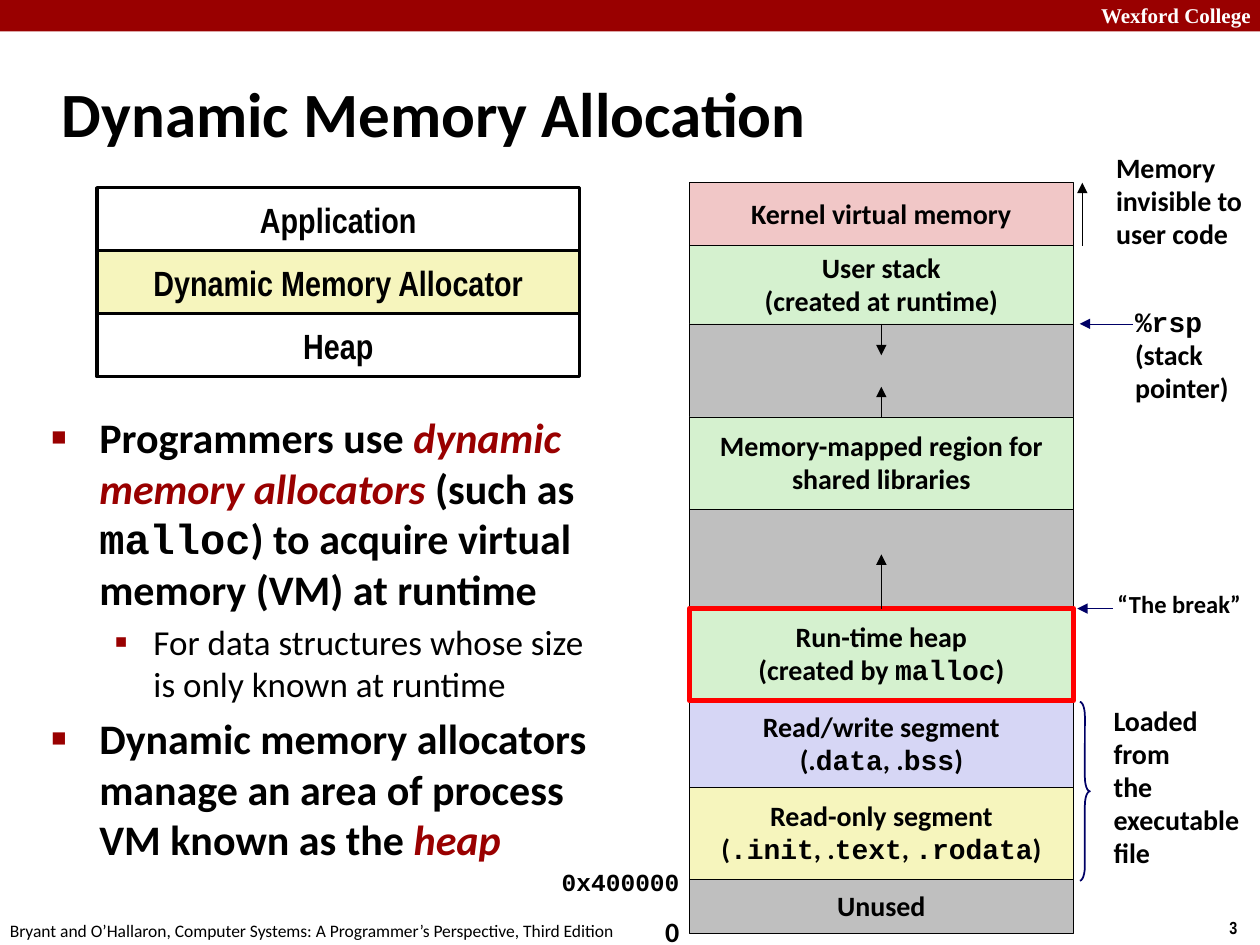
from dataclasses import dataclass

from lxml.etree import SubElement
from pptx import Presentation
from pptx.dml.color import RGBColor
from pptx.enum.shapes import MSO_CONNECTOR, MSO_SHAPE
from pptx.enum.text import MSO_ANCHOR, PP_ALIGN
from pptx.oxml.ns import qn
from pptx.util import Inches, Pt


@dataclass(frozen=True)
class Theme:
    black: str = "000000"
    white: str = "FFFFFF"
    crimson: str = "990000"
    navy: str = "000066"
    red: str = "FF0000"
    pink: str = "F1C7C7"
    green: str = "D5F1CF"
    gray: str = "BFBFBF"
    lilac: str = "D6D6F5"
    yellow: str = "F6F5BD"
    sans: str = "Calibri"
    narrow: str = "Arial Narrow"
    mono: str = "Courier New"
    serif: str = "Times New Roman"
    title: int = 36
    body: int = 24
    sub: int = 20
    label: int = 16
    small: int = 14
    header: int = 12
    footer: int = 10


class SlideBuilder:
    """Draws on one slide; text marks `code` and *emphasis* inline."""

    def __init__(self, slide, theme):
        self.slide, self.theme = slide, theme

    def add_runs(self, paragraph, text, size, font=None, color=None, bold=True):
        for i, code_part in enumerate(text.split("`")):
            for j, part in enumerate(code_part.split("*")):
                if not part:
                    continue
                run = paragraph.add_run()
                run.text = part
                style = run.font
                style.size, style.bold, style.italic = Pt(size), bold, j % 2 == 1
                style.name = self.theme.mono if i % 2 else font or self.theme.sans
                ink = self.theme.crimson if j % 2 else color or self.theme.black
                style.color.rgb = RGBColor.from_string(ink)

    def fill_lines(self, frame, lines, size, align=None, spacing=None, **style):
        for n, line in enumerate(lines):
            paragraph = frame.add_paragraph() if n else frame.paragraphs[0]
            paragraph.alignment, paragraph.line_spacing = align, spacing
            self.add_runs(paragraph, line, size, **style)

    def title(self, text, left, top, width, height):
        holder = self.slide.shapes.title
        holder.left, holder.top = Inches(left), Inches(top)
        holder.width, holder.height = Inches(width), Inches(height)
        frame = holder.text_frame
        frame.vertical_anchor = MSO_ANCHOR.MIDDLE
        self.fill_lines(frame, [text], self.theme.title, PP_ALIGN.LEFT)

    def text(self, lines, left, top, width, height, size, wrap=True, **style):
        box = self.slide.shapes.add_textbox(
            Inches(left), Inches(top), Inches(width), Inches(height))
        box.text_frame.word_wrap = wrap
        self.fill_lines(box.text_frame, lines, size, **style)

    def shape(self, kind, left, top, width, height, fill, line, weight):
        shape = self.slide.shapes.add_shape(
            kind, Inches(left), Inches(top), Inches(width), Inches(height))
        shape.shadow.inherit = False
        if fill:
            shape.fill.solid()
            shape.fill.fore_color.rgb = RGBColor.from_string(fill)
        else:
            shape.fill.background()
        if line:
            shape.line.color.rgb = RGBColor.from_string(line)
            shape.line.width = Pt(weight)
        else:
            shape.line.fill.background()
        return shape

    def block(self, lines, left, top, width, height, fill, size,
              line=None, weight=0.25, **style):
        block = self.shape(MSO_SHAPE.RECTANGLE, left, top, width, height,
                           fill, line or self.theme.black, weight)
        block.text_frame.word_wrap = False
        block.text_frame.vertical_anchor = MSO_ANCHOR.MIDDLE
        self.fill_lines(block.text_frame, lines, size, PP_ALIGN.CENTER, **style)
        return block

    def arrow(self, x1, y1, x2, y2, color=None, start=None):
        arrow = self.slide.shapes.add_connector(
            MSO_CONNECTOR.STRAIGHT, Inches(x1), Inches(y1), Inches(x2), Inches(y2))
        if start:
            arrow.begin_connect(*start)
        arrow.line.color.rgb = RGBColor.from_string(color or self.theme.black)
        arrow.line.width = Pt(0.25)
        props = arrow._element.spPr
        SubElement(props.find(qn("a:ln")), qn("a:tailEnd"), type="triangle")
        SubElement(props, qn("a:effectLst"))

    def bullets(self, items, left, top, width, height):
        box = self.slide.shapes.add_textbox(
            Inches(left), Inches(top), Inches(width), Inches(height))
        frame = box.text_frame
        frame.word_wrap = True
        levels = [(self.theme.body, True, 0.38, 0.38, "■", 60),
                  (self.theme.sub, False, 0.81, 0.31, "▪", 110)]
        for n, (level, text) in enumerate(items):
            size, bold, margin, hang, mark, percent = levels[level]
            paragraph = frame.add_paragraph() if n else frame.paragraphs[0]
            paragraph.level = level
            paragraph.space_before = Pt(size * 0.2)
            self.add_runs(paragraph, text, size, bold=bold)
            props = paragraph._p.get_or_add_pPr()
            props.set("marL", str(Inches(margin)))
            props.set("indent", str(-Inches(hang)))
            tint = SubElement(props, qn("a:buClr"))
            SubElement(tint, qn("a:srgbClr"), val=self.theme.crimson)
            SubElement(props, qn("a:buSzPct"), val=str(percent * 1000))
            SubElement(props, qn("a:buFont"), typeface="Arial")
            SubElement(props, qn("a:buChar"), char=mark)


def main():
    deck = Presentation()
    deck.slide_width, deck.slide_height = Inches(10), Inches(7.5)
    t = Theme()
    b = SlideBuilder(deck.slides.add_slide(deck.slide_layouts[5]), t)

    # Header band, footer and title
    b.shape(MSO_SHAPE.RECTANGLE, 0, 0, 10, 0.25, t.crimson, None, 0)
    b.text(["Wexford College"], 8.64, -0.03, 1.43, 0.3, t.header,
           font=t.serif, color=t.white)
    b.text(["3"], 9.66, 7.23, 0.34, 0.27, t.footer, wrap=False, font=t.narrow)
    b.text(["Bryant and O’Hallaron, Computer Systems: "
            "A Programmer’s Perspective, Third Edition"],
           -0.02, 7.25, 5.08, 0.27, t.footer, wrap=False, bold=False)
    b.title("Dynamic Memory Allocation", 0.39, 0.48, 8.3, 0.83)

    # Main points
    b.bullets([
        (0, "Programmers use *dynamic memory allocators *(such as `malloc`) "
            "to acquire virtual memory (VM) at runtime"),
        (1, "For data structures whose size is only known at runtime"),
        (0, "Dynamic memory allocators manage an area of process VM "
            "known as the *heap*"),
    ], 0.31, 3.22, 4.48, 4.17)

    # Software layers
    layers = [("Application", t.white), ("Dynamic Memory Allocator", t.yellow),
              ("Heap", t.white)]
    for n, (layer, fill) in enumerate(layers):
        b.block([layer], 0.77, 1.49 + 0.5 * n, 3.83, 0.5, fill, t.sub,
                weight=2, font=t.narrow)

    # Address space, from high to low addresses: name, top, fill, lines
    left, width, bottom = 5.47, 3.05, 7.41
    regions = [
        ("kernel", 1.45, t.pink, ["Kernel virtual memory"]),
        ("stack", 1.95, t.green, ["User stack", "(created at runtime)"]),
        ("stack gap", 2.57, t.gray, []),
        ("mapped", 3.31, t.green, ["Memory-mapped region for", "shared libraries"]),
        ("heap gap", 4.04, t.gray, []),
        ("heap", 4.83, t.green, ["Run-time heap", "(created by `malloc`)"]),
        ("data", 5.56, t.lilac, ["Read/write segment", "(.`data`, .`bss`)"]),
        ("code", 6.25, t.yellow,
         ["Read-only segment", "(`.init`, .`text`, `.rodata`)"]),
        ("unused", 6.98, t.gray, ["Unused"]),
    ]
    tops = {name: top for name, top, _, _ in regions}
    ends = [top for _, top, _, _ in regions[1:]] + [bottom]
    spans = list(zip(regions, ends))
    spans.sort(key=lambda span: span[0][0] == "heap")  # red outline on top
    blocks = {}
    for (name, top, fill, lines), end in spans:
        outline = {"line": t.red, "weight": 3} if name == "heap" else {}
        blocks[name] = b.block(lines, left, top, width, end - top, fill,
                               t.label, spacing=0.98, **outline)

    # Growth directions inside the gaps
    middle = left + width / 2
    for name, side, start, tip in [("stack", 2, tops["stack gap"], 2.82),
                                   ("mapped", 0, tops["mapped"], 3.07),
                                   ("heap", 0, tops["heap"], 4.4)]:
        b.arrow(middle, start, middle, tip, start=(blocks[name], side))

    # Side pointers and brace
    b.arrow(8.59, tops["stack"], 8.59, tops["kernel"])
    b.arrow(8.99, tops["stack gap"], 8.57, tops["stack gap"], t.navy)
    b.arrow(8.83, tops["heap"], 8.55, tops["heap"], t.navy)
    brace = b.shape(MSO_SHAPE.RIGHT_BRACE, 8.57, 5.57, 0.08, 1.42, None, t.navy, 1)
    brace.adjustments[0] = 1.42

    # Side labels and addresses
    for lines, x, y, w, h, size in [
        (["Memory", "invisible to", "user code"], 8.76, 1.16, 1.26, 0.89, t.label),
        (["`%rsp`", "(stack", "pointer)"], 8.91, 2.38, 0.95, 0.88, t.label),
        (["“The break”"], 8.77, 4.64, 1.18, 0.32, t.small),
        (["Loaded", "from", "the", "executable", "file"],
         8.74, 5.55, 1.26, 1.42, t.label),
        (["`0x400000`"], 4.36, 6.84, 1.14, 0.33, t.small),
        (["0"], 5.18, 7.22, 0.31, 0.37, t.label),
    ]:
        b.text(lines, x, y, w, h, size, wrap=len(lines) > 1, spacing=0.98)

    deck.save("out.pptx")


if __name__ == "__main__":
    main()
